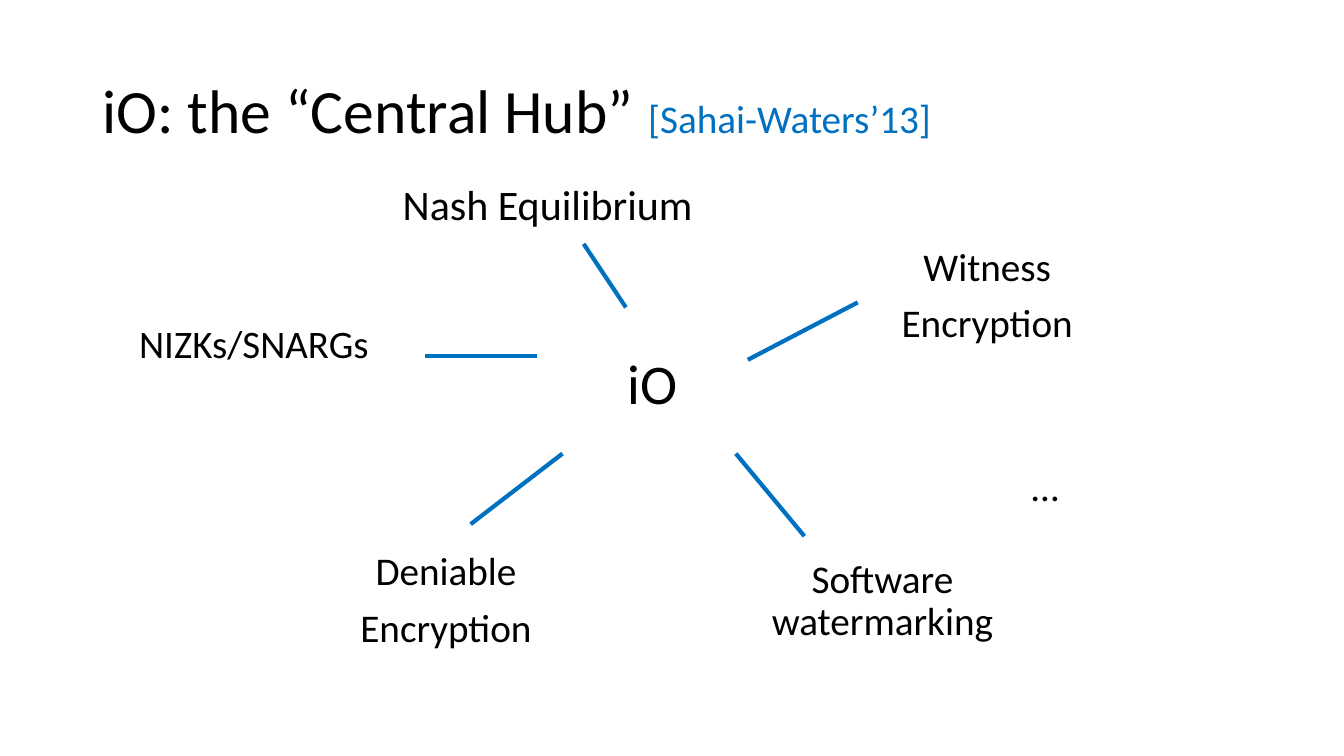
from dataclasses import dataclass

from lxml import etree
from pptx import Presentation
from pptx.dml.color import RGBColor
from pptx.enum import shapes, text
from pptx.oxml import ns
from pptx.util import Pt

# Content: title runs, then labels and spokes, lengths in points
TITLE = "iO: the “Central Hub” "
CITATION = "[Sahai-Waters’13]"
TITLE_BOX = (66, 28.8, 828, 104.4)

# Lines of text, (left, top, width, height), type size
LABELS = [
    (["iO"], (348.5, 230.4, 235.4, 90.7), 40),
    (["Witness", "Encryption"], (576.7, 169.2, 257, 85.7), 28),
    (["NIZKs/SNARGs"], (90, 223.2, 182.9, 47.5), 27.8),
    (["Deniable", "Encryption"], (190.1, 386.6, 257, 85.7), 28),
    (["…"], (659.5, 326.9, 174.2, 44.6), 28),
    (["Nash Equilibrium"], (273.6, 121.7, 235.4, 51.8), 30),
    (["Software watermarking"], (512.6, 403.9, 235.4, 51.8), 28),
]

# Start x, start y, end x, end y
SPOKES = [
    (401.8, 324, 336.2, 374.4),
    (525.6, 324, 574.6, 383),
    (303.8, 254.2, 383.8, 254.2),
    (534.2, 257, 612.7, 216),
    (447.1, 219.6, 416.9, 174.2),
]


@dataclass(frozen=True)
class Theme:
    font: str = "Calibri"
    ink: RGBColor = RGBColor(0, 0, 0)
    accent: RGBColor = RGBColor(0x00, 0x70, 0xC0)
    title_size: float = 44
    citation_size: float = 28
    line_width: float = 3
    line_spacing: float = 0.9
    space_before: float = 10


THEME = Theme()


def points(values):
    return [Pt(value) for value in values]


def format_run(run, size, color):
    run.font.name = THEME.font
    run.font.size = Pt(size)
    run.font.color.rgb = color


def format_frame(frame):
    frame.word_wrap = True
    frame.auto_size = text.MSO_AUTO_SIZE.NONE
    frame.vertical_anchor = text.MSO_ANCHOR.MIDDLE


def add_title(slide):
    title = slide.shapes.title
    title.left, title.top, title.width, title.height = points(TITLE_BOX)
    format_frame(title.text_frame)
    paragraph = title.text_frame.paragraphs[0]
    paragraph.alignment = text.PP_ALIGN.LEFT
    paragraph.line_spacing = THEME.line_spacing
    for words, size, color in (
        (TITLE, THEME.title_size, THEME.ink),
        (CITATION, THEME.citation_size, THEME.accent),
    ):
        run = paragraph.add_run()
        run.text = words
        format_run(run, size, color)


def add_label(slide, lines, box, size):
    frame = slide.shapes.add_textbox(*points(box)).text_frame
    format_frame(frame)
    frame.text = "\n".join(lines)
    for paragraph in frame.paragraphs:
        paragraph.alignment = text.PP_ALIGN.CENTER
        paragraph.line_spacing = THEME.line_spacing
        paragraph.space_before = Pt(THEME.space_before)
        format_run(paragraph.runs[0], size, THEME.ink)


def add_spoke(slide, ends):
    spoke = slide.shapes.add_connector(shapes.MSO_CONNECTOR.STRAIGHT, *points(ends))
    spoke.line.color.rgb = THEME.accent
    spoke.line.width = Pt(THEME.line_width)
    etree.SubElement(spoke.element.spPr, ns.qn("a:effectLst"))


def main():
    presentation = Presentation()
    presentation.slide_width, presentation.slide_height = points((960, 540))
    slide = presentation.slides.add_slide(presentation.slide_layouts[5])

    # Title with citation
    add_title(slide)

    # Spokes around the hub
    for ends in SPOKES:
        add_spoke(slide, ends)

    # Hub and its applications
    for lines, box, size in LABELS:
        add_label(slide, lines, box, size)

    presentation.save("out.pptx")


if __name__ == "__main__":
    main()
